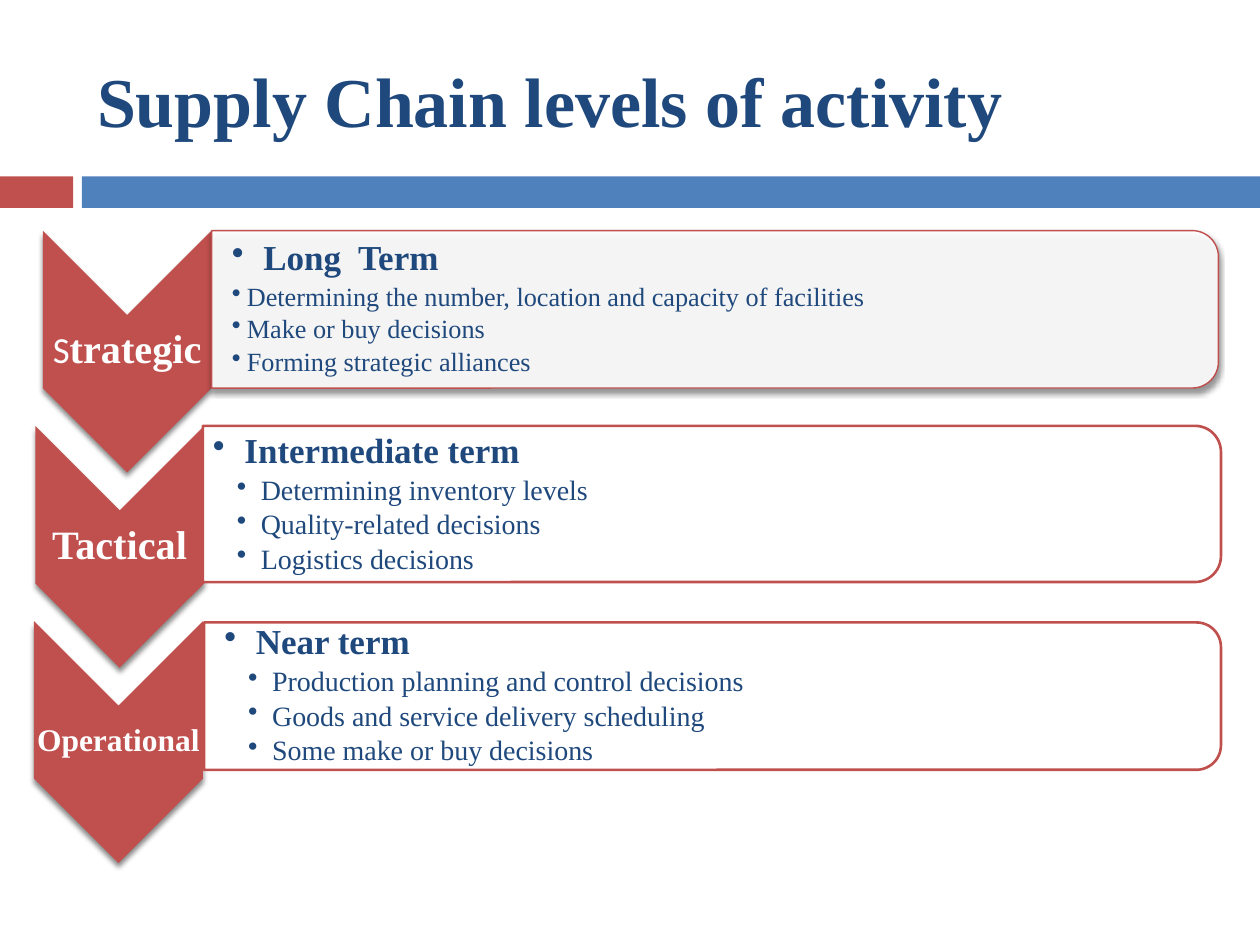
import pptx
import pptx.util
import pptx.dml.color
import pptx.enum.shapes
import pptx.enum.text
import pptx.oxml
import pptx.oxml.ns

Inches, Pt = pptx.util.Inches, pptx.util.Pt
RGB = pptx.dml.color.RGBColor
SHAPE = pptx.enum.shapes.MSO_SHAPE
ALIGN = pptx.enum.text.PP_ALIGN
MIDDLE = pptx.enum.text.MSO_ANCHOR.MIDDLE
NS = pptx.oxml.ns.nsdecls("a")

RED = RGB(0xC0, 0x50, 0x4D)
BLUE = RGB(0x4F, 0x81, 0xBD)
NAVY = RGB(0x1F, 0x49, 0x7D)
WHITE = RGB(0xFF, 0xFF, 0xFF)
SERIF = "Times New Roman"

# Content: label runs are (text, size, font, bold); boxes are left, top, width, height
TITLE = "Supply Chain levels of activity"
LEVELS = [
    dict(label=[("S", 21, "Calibri", False), ("trategic", 23, SERIF, True)],
         left=0.34, panel=(1.68, 1.83, 7.99, 1.25), text=(1.68, 1.89, 7.93, 1.12),
         line=0.79, raised=True, size=15, indent=(0.12, 0.12), heading="Long  Term",
         items=["Determining the number, location and capacity of facilities",
                "Make or buy decisions", "Forming strategic alliances"]),
    dict(label=[("Tactical", 23, SERIF, True)],
         left=0.28, panel=(1.61, 3.38, 8.08, 1.24), text=(1.53, 3.44, 8.02, 1.12),
         line=1.5, raised=False, size=16, indent=(0.38, 0.19), heading="Intermediate term",
         items=["Determining inventory levels", "Quality-related decisions",
                "Logistics decisions"]),
    dict(label=[("Operational", 18, SERIF, True)],
         left=0.27, panel=(1.62, 4.94, 8.07, 1.17), text=(1.62, 4.99, 8.01, 1.06),
         line=1.5, raised=False, size=16, indent=(0.38, 0.19), heading="Near term",
         items=["Production planning and control decisions",
                "Goods and service delivery scheduling", "Some make or buy decisions"]),
]
CHEVRON_TOP, CHEVRON_STEP = 1.83, 1.55
CHEVRON_W, CHEVRON_H = 1.34, 1.92


def add_shape(kind, box, fill, line=None, rotated=False, shadow=False):
    """Draw a shape that covers box, also when it is turned by 90 degrees."""
    x, y, w, h = box
    if rotated:
        x, y, w, h = x + (w - h) / 2, y + (h - w) / 2, h, w
    sp = s.shapes.add_shape(kind, Inches(x), Inches(y), Inches(w), Inches(h))
    sp.rotation = 90 if rotated else 0
    sp.fill.solid()
    sp.fill.fore_color.rgb = fill
    if line:
        sp.line.color.rgb = RED
        sp.line.width = Pt(line)
    else:
        sp.line.fill.background()
    sp.shadow.inherit = False
    if shadow:
        effects = sp._element.spPr.find(pptx.oxml.ns.qn("a:effectLst"))
        effects.append(pptx.oxml.parse_xml(
            f'<a:outerShdw {NS} blurRad="{Pt(3)}" dist="{Pt(2.4)}" dir="5400000" '
            'rotWithShape="0"><a:srgbClr val="000000"><a:alpha val="45000"/>'
            '</a:srgbClr></a:outerShdw>'))
    return sp


def add_text(box, inset):
    tf = s.shapes.add_textbox(*map(Inches, box)).text_frame
    tf.word_wrap = True
    tf.vertical_anchor = MIDDLE
    tf.margin_left = Inches(inset)
    tf.margin_right = tf.margin_top = tf.margin_bottom = Inches(0.01)
    return tf


def set_font(font, size, color, name=SERIF, bold=False):
    font.size, font.name, font.bold = Pt(size), name, bold
    font.color.rgb = color


def add_bullet(p, text, size, margin, hanging, bold=False):
    p.text = text
    p.line_spacing = 0.9
    p.space_after = Pt(0.15 * size)
    set_font(p.font, size, NAVY, bold=bold)
    pPr = p._p.get_or_add_pPr()
    pPr.set("marL", str(Inches(margin)))
    pPr.set("indent", str(-Inches(hanging)))
    bullet = pptx.oxml.parse_xml(f'<a:buChar {NS} char="•"/>')
    pPr.insert_element_before(bullet, "a:tabLst", "a:defRPr", "a:extLst")


prs = pptx.Presentation()
prs.slide_width, prs.slide_height = Inches(10), Inches(7.5)
s = prs.slides.add_slide(prs.slide_layouts[5])

# Title and the band below it
title = s.shapes.title
title.left, title.top, title.width, title.height = map(Inches, (0.67, 0.25, 8.92, 1.08))
title.text_frame.vertical_anchor = MIDDLE
p = title.text_frame.paragraphs[0]
p.text = TITLE
p.alignment = ALIGN.LEFT
set_font(p.font, 40, NAVY, bold=True)
add_shape(SHAPE.RECTANGLE, (0, 1.4, 0.58, 0.25), RED)
add_shape(SHAPE.RECTANGLE, (0.65, 1.4, 9.35, 0.25), BLUE)

for i, level in enumerate(LEVELS):
    # Chevron with its label
    top = CHEVRON_TOP + i * CHEVRON_STEP
    add_shape(SHAPE.CHEVRON, (level["left"], top, CHEVRON_W, CHEVRON_H), RED,
              rotated=True, shadow=True)
    tf = add_text((level["left"], top + CHEVRON_W / 2, CHEVRON_W, 0.57), 0.01)
    p = tf.paragraphs[0]
    p.alignment = ALIGN.CENTER
    p.line_spacing = 0.9
    for text, size, name, bold in level["label"]:
        r = p.add_run()
        r.text = text
        set_font(r.font, size, WHITE, name, bold)

    # Panel with its heading and list
    panel = add_shape(SHAPE.ROUND_2_SAME_RECTANGLE, level["panel"], WHITE, level["line"],
                      rotated=True, shadow=level["raised"])
    if level["raised"]:
        color = panel._element.spPr.find(".//" + pptx.oxml.ns.qn("a:srgbClr"))
        color.append(pptx.oxml.parse_xml(f'<a:alpha {NS} val="90000"/>'))
    tf = add_text(level["text"], 0.16)
    add_bullet(tf.paragraphs[0], level["heading"], 20, 0.25, 0.25, bold=True)
    for item in level["items"]:
        add_bullet(tf.add_paragraph(), item, level["size"], *level["indent"])

prs.save("out.pptx")
